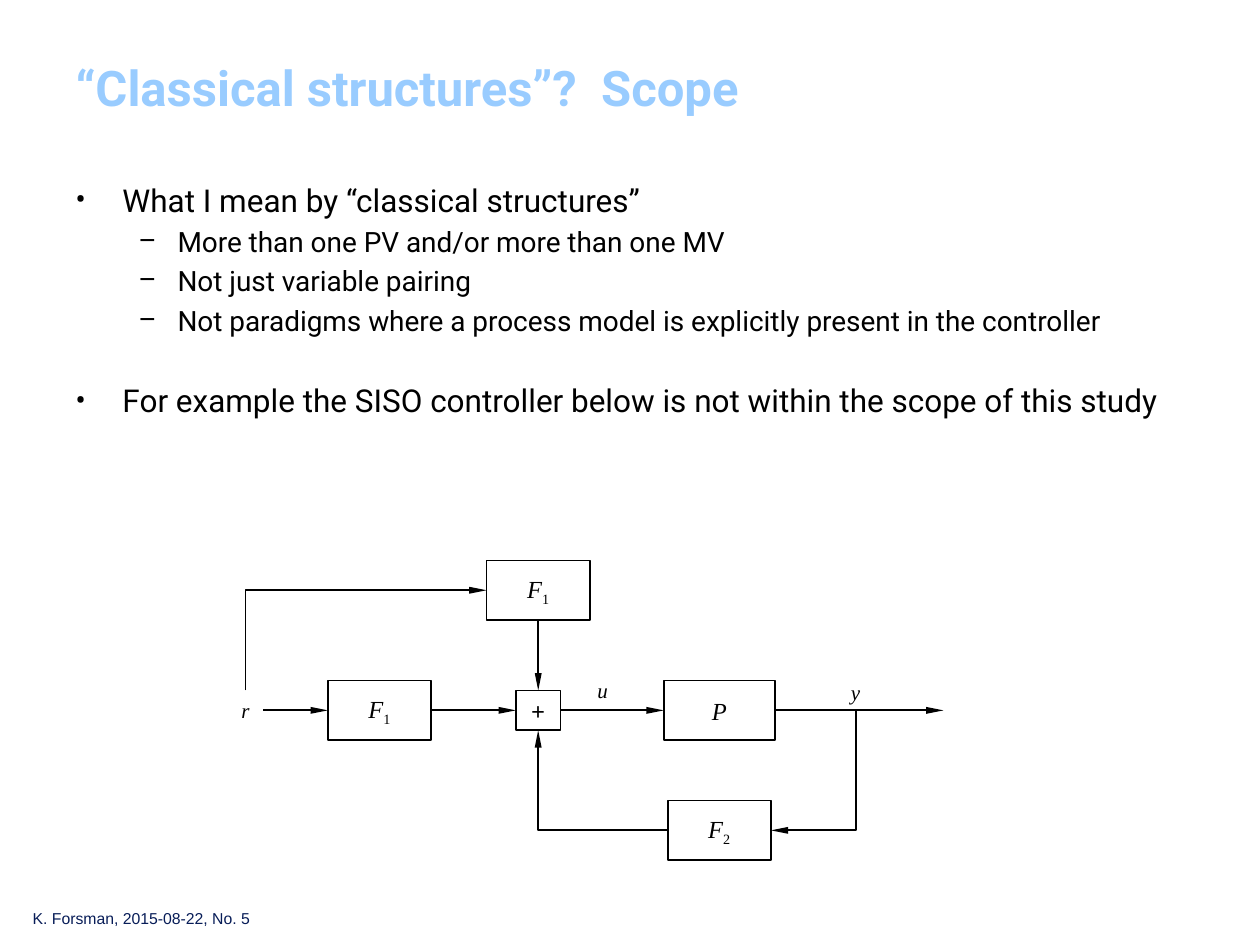
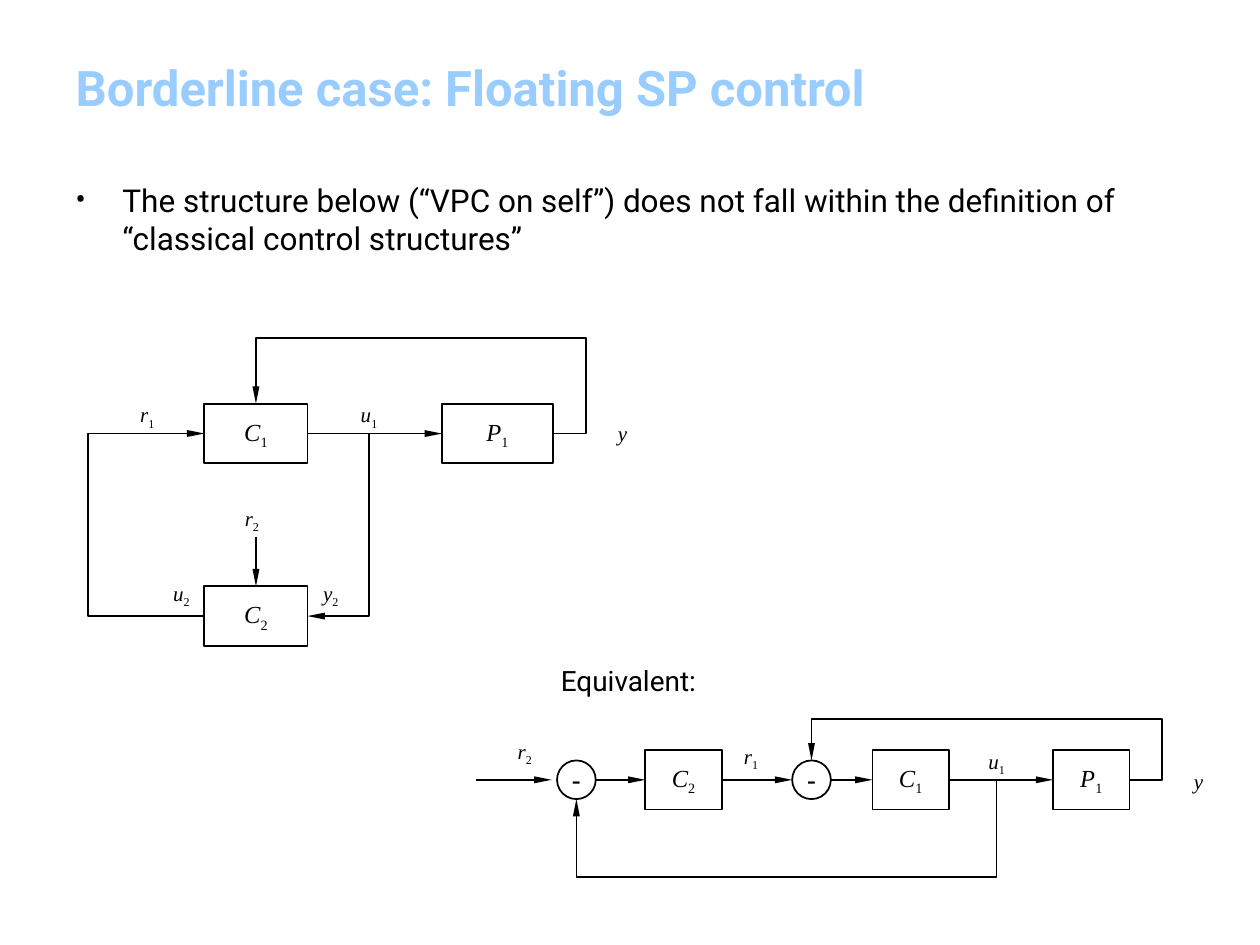
from pptx import Presentation
from pptx.dml.color import RGBColor
from pptx.enum.shapes import MSO_CONNECTOR, MSO_SHAPE
from pptx.enum.text import MSO_ANCHOR, MSO_AUTO_SIZE, PP_ALIGN
from pptx.oxml.ns import qn
from pptx.util import Cm, Pt
from lxml import etree

BLACK = RGBColor(0x00, 0x00, 0x00)
WHITE = RGBColor(0xFF, 0xFF, 0xFF)
TITLE_BLUE = RGBColor(0x99, 0xCC, 0xFF)
FOOTER_NAVY = RGBColor(0x08, 0x1D, 0x58)

TEXT_FONT = "Roboto"
MATH_FONT = "Times New Roman"
PLAIN_FONT = "Arial"

STRAIGHT = MSO_CONNECTOR.STRAIGHT
RECTANGLE, OVAL = MSO_SHAPE.RECTANGLE, MSO_SHAPE.OVAL
MIDDLE, TOP = MSO_ANCHOR.MIDDLE, MSO_ANCHOR.TOP
LEFT, CENTER = PP_ALIGN.LEFT, PP_ALIGN.CENTER
NO_AUTOFIT = MSO_AUTO_SIZE.NONE

TITLE_ONLY = 5
TITLE_BOX = (1.27, 0.78, 22.63, 1.96)
BODY_BOX = (1.27, 3.53, 22.86, 5.4)
FOOTER_BOX = (0.41, 18.2, 5.16, 0.64)
BLOCK_W, BLOCK_H = 2.08, 1.2
PLANT_W = 2.24
NARROW_W = 1.54
CIRCLE = 0.78
LABEL_W, LABEL_H = 1.4, 0.76
LEVELS = [
    {"bullet": "•", "size": 18, "indent": 0.95, "hang": 0.95, "before": 3.6},
    {"bullet": "–", "size": 16, "indent": 2.06, "hang": 0.79, "before": 3.2},
]


def set_font(font, name, size, color=BLACK, bold=False):
    font.name, font.size, font.bold = name, Pt(size), bold
    font.color.rgb = color


def add_text(slide, box, text, name, size, color=BLACK, align=LEFT, wrap=True):
    frame = slide.shapes.add_textbox(*map(Cm, box)).text_frame
    frame.word_wrap = wrap
    paragraph = frame.paragraphs[0]
    paragraph.text = text
    paragraph.alignment = align
    set_font(paragraph.font, name, size, color)


def add_title(slide, text):
    title = slide.shapes.title
    title.left, title.top, title.width, title.height = map(Cm, TITLE_BOX)
    frame = title.text_frame
    frame.text = text
    frame.vertical_anchor = MIDDLE
    frame.auto_size = NO_AUTOFIT
    paragraph = frame.paragraphs[0]
    paragraph.alignment = LEFT
    set_font(paragraph.font, TEXT_FONT, 28, TITLE_BLUE, bold=True)


def add_bullets(slide, box, items):
    frame = slide.shapes.add_textbox(*map(Cm, box)).text_frame
    frame.word_wrap = True
    for index, (level, text, extra_space) in enumerate(items):
        style = LEVELS[level]
        paragraph = frame.add_paragraph() if index else frame.paragraphs[0]
        paragraph.text = text
        paragraph.level = level
        properties = paragraph._p.get_or_add_pPr()
        properties.set("marL", str(Cm(style["indent"])))
        properties.set("indent", str(-Cm(style["hang"])))
        etree.SubElement(properties, qn("a:buFont")).set("typeface", TEXT_FONT)
        etree.SubElement(properties, qn("a:buChar")).set("char", style["bullet"])
        if index:
            paragraph.space_before = Pt(style["before"] + extra_space)
        set_font(paragraph.font, TEXT_FONT, style["size"])


def write_symbol(frame, symbol, size):
    frame.word_wrap = False
    paragraph = frame.paragraphs[0]
    paragraph.alignment = CENTER
    set_font(paragraph.font, MATH_FONT, size)
    letter, subscript = symbol[0], symbol[1:]
    run = paragraph.add_run()
    run.text = letter
    run.font.italic = True
    if subscript:
        run = paragraph.add_run()
        run.text = subscript
        run._r.get_or_add_rPr().set("baseline", "-25000")


class Diagram:
    def __init__(self, slide, left, top):
        self.slide, self.left, self.top = slide, left, top

    def at(self, x, y):
        return Cm(self.left + x), Cm(self.top + y)

    def outline(self, kind, x, y, width, height):
        shape = self.slide.shapes.add_shape(
            kind, *self.at(x - width / 2, y - height / 2), Cm(width), Cm(height))
        shape.shadow.inherit = False
        shape.fill.solid()
        shape.fill.fore_color.rgb = WHITE
        shape.line.color.rgb = BLACK
        shape.line.width = Pt(1)
        shape.text_frame.vertical_anchor = MIDDLE
        return shape

    def block(self, symbol, x, y, width=BLOCK_W):
        shape = self.outline(RECTANGLE, x, y, width, BLOCK_H)
        write_symbol(shape.text_frame, symbol, 14)

    def junction(self, kind, sign, x, y, width, height, name, size, bold):
        frame = self.outline(kind, x, y, width, height).text_frame
        frame.margin_left = frame.margin_right = 0
        frame.margin_top = frame.margin_bottom = 0
        frame.word_wrap = False
        paragraph = frame.paragraphs[0]
        paragraph.text = sign
        paragraph.alignment = CENTER
        set_font(paragraph.font, name, size, bold=bold)

    def signal(self, symbol, x, y):
        label = self.slide.shapes.add_textbox(
            *self.at(x - LABEL_W / 2, y - LABEL_H / 2), Cm(LABEL_W), Cm(LABEL_H))
        label.text_frame.vertical_anchor = TOP
        write_symbol(label.text_frame, symbol, 12)

    def arrow(self, *corners):
        points = [self.at(*corner) for corner in corners]
        shapes = self.slide.shapes
        if len(points) == 2:
            path_shape = shapes.add_connector(STRAIGHT, *points[0], *points[1])
        else:
            builder = shapes.build_freeform(*points[0])
            builder.add_line_segments(points[1:], close=False)
            path_shape = builder.convert_to_shape()
            path_shape.fill.background()
        path_shape.line.color.rgb = BLACK
        path_shape.line.width = Pt(1)
        line = path_shape.line._get_or_add_ln()
        head = etree.SubElement(line, qn("a:tailEnd"))
        for key, value in (("type", "triangle"), ("w", "sm"), ("len", "lg")):
            head.set(key, value)
        etree.SubElement(path_shape._element.spPr, qn("a:effectLst"))


def draw_siso_controller(slide, left, top):
    diagram = Diagram(slide, left, top)
    upper, main, lower = (0.6 + 2.42 * row for row in range(3))
    reference, prefilter, total, plant, tap, output = 0.33, 3.03, 6.23, 9.88, 12.63, 14.4
    half_w, half_h, half_plant = BLOCK_W / 2, BLOCK_H / 2, PLANT_W / 2
    sum_w, sum_h = 0.9, 0.8

    diagram.arrow((reference, main - 0.4), (reference, upper), (total - half_w, upper))
    diagram.arrow((reference + 0.36, main), (prefilter - half_w, main))
    diagram.arrow((prefilter + half_w, main), (total - sum_w / 2, main))
    diagram.arrow((total, upper + half_h), (total, main - sum_h / 2))
    diagram.arrow((total + sum_w / 2, main), (plant - half_plant, main))
    diagram.arrow((plant + half_plant, main), (output, main))
    diagram.arrow((tap, main), (tap, lower), (plant + half_w, lower))
    diagram.arrow((plant - half_w, lower), (total, lower), (total, main + sum_h / 2))

    diagram.block("F1", total, upper)
    diagram.block("F1", prefilter, main)
    diagram.block("P", plant, main, PLANT_W)
    diagram.block("F2", plant, lower)
    diagram.junction(RECTANGLE, "+", total, main, sum_w, sum_h, MATH_FONT, 14, True)
    diagram.signal("r", reference, main)
    diagram.signal("u", 7.53, main - 0.4)
    diagram.signal("y", tap, main - 0.36)


def draw_floating_setpoint(slide, left, top):
    diagram = Diagram(slide, left, top)
    main, lower = 1.93, 5.61
    controller, tap, plant, loop = 3.38, 5.66, 8.25, 10.03
    half_w, half_h, half_plant = BLOCK_W / 2, BLOCK_H / 2, PLANT_W / 2

    diagram.arrow((plant + half_plant, main), (loop, main), (loop, 0),
                  (controller, 0), (controller, main - half_h))
    diagram.arrow((controller + half_w, main), (plant - half_plant, main))
    diagram.arrow((tap, main), (tap, lower), (controller + half_w, lower))
    diagram.arrow((controller - half_w, lower), (0, lower), (0, main),
                  (controller - half_w, main))
    diagram.arrow((controller, 4.01), (controller, lower - half_h))

    diagram.block("C1", controller, main)
    diagram.block("P1", plant, main, PLANT_W)
    diagram.block("C2", controller, lower)
    for symbol, x, y in (("r1", 1.19, main - 0.38), ("u1", tap, main - 0.38),
                         ("y", 10.77, main), ("r2", 3.3, 3.63),
                         ("u2", 1.88, lower - 0.46), ("y2", 4.89, lower - 0.46)):
        diagram.signal(symbol, x, y)


def draw_equivalent(slide, left, top):
    diagram = Diagram(slide, left, top)
    upper, main, lower = 1.24, 2.46, 4.42
    outer_sum, outer, inner_sum, inner, plant = 2.02, 4.18, 6.76, 8.76, 12.4
    tap, loop = 10.49, 13.82
    half_w, radius = NARROW_W / 2, CIRCLE / 2

    add_text(slide, (left + 1.04, top, 4.06, 1.07), "Equivalent:", TEXT_FONT, 16, align=CENTER)
    for start, end in ((0, 1.52), (outer_sum + radius, outer - half_w),
                       (outer + half_w, inner_sum - radius),
                       (inner_sum + radius, inner - half_w),
                       (inner + half_w, plant - half_w)):
        diagram.arrow((start, main), (end, main))
    diagram.arrow((plant + half_w, main), (loop, main), (loop, upper),
                  (inner_sum, upper), (inner_sum, main - radius))
    diagram.arrow((tap, main), (tap, lower), (outer_sum, lower),
                  (outer_sum, main + radius))

    for symbol, x in (("C2", outer), ("C1", inner), ("P1", plant)):
        diagram.block(symbol, x, main, NARROW_W)
    for x in (outer_sum, inner_sum):
        diagram.junction(OVAL, "-", x, main, CIRCLE, CIRCLE, PLAIN_FONT, 16, False)
    for symbol, x, y in (("r2", 0.98, 1.88), ("r1", 5.54, 1.98),
                         ("u1", tap, 2.08), ("y", 14.56, 2.49)):
        diagram.signal(symbol, x, y)


def add_content_slide(deck, title, bullets):
    slide = deck.slides.add_slide(deck.slide_layouts[TITLE_ONLY])
    add_title(slide, title)
    add_bullets(slide, BODY_BOX, bullets)
    return slide


def main():
    deck = Presentation()
    deck.slide_width, deck.slide_height = Cm(25.4), Cm(19.05)

    scope = add_content_slide(deck, "“Classical structures”?  Scope", [
        (0, "What I mean by “classical structures”", 0),
        (1, "More than one PV and/or more than one MV", 0),
        (1, "Not just variable pairing", 0),
        (1, "Not paradigms where a process model is explicitly present in the controller", 0),
        (0, "For example the SISO controller below is not within the scope of this study", 22),
    ])
    draw_siso_controller(scope, 4.62, 11.3)
    add_text(scope, FOOTER_BOX, "K. Forsman, 2015-08-22, No. 5",
             PLAIN_FONT, 9, FOOTER_NAVY, wrap=False)

    borderline = add_content_slide(deck, "Borderline case: Floating SP control", [
        (0, "The structure below (“VPC on self”) does not fall within the definition of "
            "“classical control structures”", 0),
    ])
    draw_floating_setpoint(borderline, 1.78, 6.81)
    draw_equivalent(borderline, 9.6, 13.26)

    deck.save("out.pptx")


if __name__ == "__main__":
    main()
